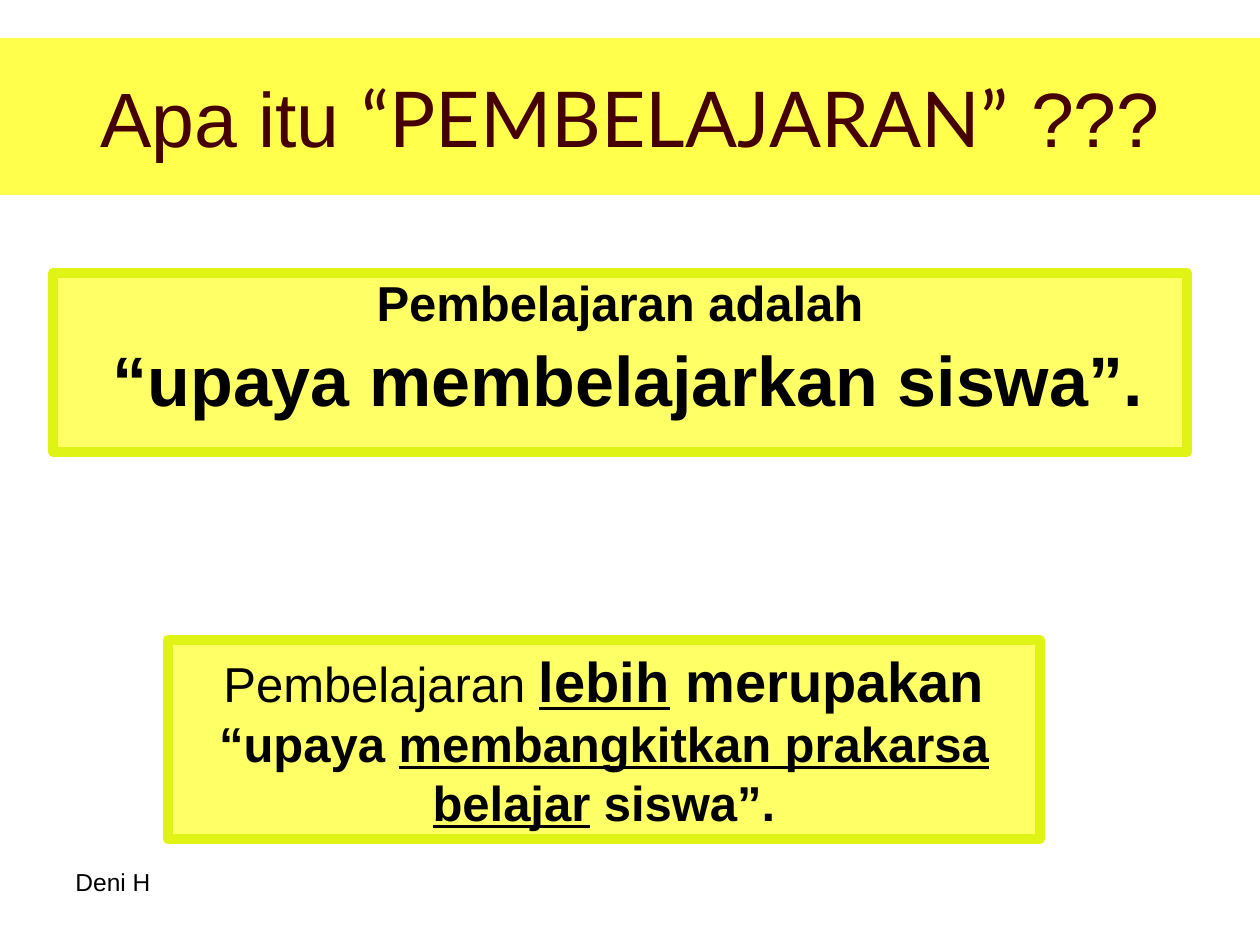
from lxml import etree
from pptx import Presentation
from pptx.dml.color import RGBColor
from pptx.enum.shapes import MSO_SHAPE
from pptx.enum.text import MSO_ANCHOR, PP_ALIGN
from pptx.oxml.ns import qn
from pptx.util import Emu, Pt

PX = 914400 // 126
RECT = MSO_SHAPE.RECTANGLE
TOP, MIDDLE = MSO_ANCHOR.TOP, MSO_ANCHOR.MIDDLE
LEFT, CENTER = PP_ALIGN.LEFT, PP_ALIGN.CENTER
YELLOW = RGBColor(0xFF, 0xFF, 0x00)
LIME = RGBColor(0xDF, 0xF4, 0x14)
MAROON = RGBColor(0x46, 0x00, 0x02)
BLACK = RGBColor(0x00, 0x00, 0x00)

prs = Presentation()
prs.slide_width, prs.slide_height = Emu(1260 * PX), Emu(945 * PX)
slide = prs.slides.add_slide(prs.slide_layouts[6])


def add_panel(box, opacity, border):
    """Add a translucent yellow panel, bordered in lime if asked."""
    panel = slide.shapes.add_shape(RECT, *[Emu(v * PX) for v in box])
    panel.shadow.inherit = False
    panel.fill.solid()
    panel.fill.fore_color.rgb = YELLOW
    color = panel._element.spPr.find(qn("a:solidFill"))[0]
    etree.SubElement(color, qn("a:alpha")).set("val", str(opacity * 1000))
    if border:
        panel.line.color.rgb = LIME
        panel.line.width = Pt(border)
    else:
        panel.line.fill.background()
    return panel


def write(shape, paragraphs, color, anchor=TOP, align=CENTER, **spacing):
    """Write paragraphs of (text, font formats) runs into a shape."""
    frame = shape.text_frame
    frame.word_wrap = True
    frame.vertical_anchor = anchor
    for i, (space_before, runs) in enumerate(paragraphs):
        paragraph = frame.add_paragraph() if i else frame.paragraphs[0]
        formats = {"alignment": align, "space_before": Pt(space_before), **spacing}
        for key, value in formats.items():
            setattr(paragraph, key, value)
        for text, font in runs:
            run = paragraph.add_run()
            run.text = text
            run.font.color.rgb = color
            for key, value in {"name": "Arial", **font}.items():
                setattr(run.font, key, value)


# Author footer
author = slide.shapes.add_textbox(*[Emu(v * PX) for v in (63, 861, 294, 65)])
write(author, [(0, [("Deni H", {"size": Pt(14)})])], BLACK, align=LEFT)

# Title band
title = add_panel((0, 38, 1260, 157), 70, 0)
title_size = {"size": Pt(44)}
write(title, [(0, [
    ("Apa itu ", title_size),
    ("“PEMBELAJARAN”", {**title_size, "name": "Lato"}),
    (" ???", title_size),
])], MAROON, MIDDLE)

# Definition
plain = {"size": Pt(28)}
bold = {**plain, "bold": True}
large = {"size": Pt(32), "bold": True}
definition = add_panel((53, 273, 1134, 179), 60, 6)
write(definition, [
    (5.6, [("Pembelajaran adalah", bold)]),
    (8, [(" ", {"size": Pt(32)}),
         ("“upaya membelajarkan siswa”.", {"size": Pt(40), "bold": True})]),
], BLACK, line_spacing=0.9)

# Refined definition
refinement = add_panel((168, 640, 872, 199), 60, 6)
write(refinement, [(4, [
    ("Pembelajaran ", plain),
    ("lebih", {**large, "underline": True}),
    (" merupakan", large),
    (" “upaya ", bold),
    ("membangkitkan prakarsa belajar", {**bold, "underline": True}),
    (" siswa”.", bold),
])], BLACK)

prs.save("out.pptx")
